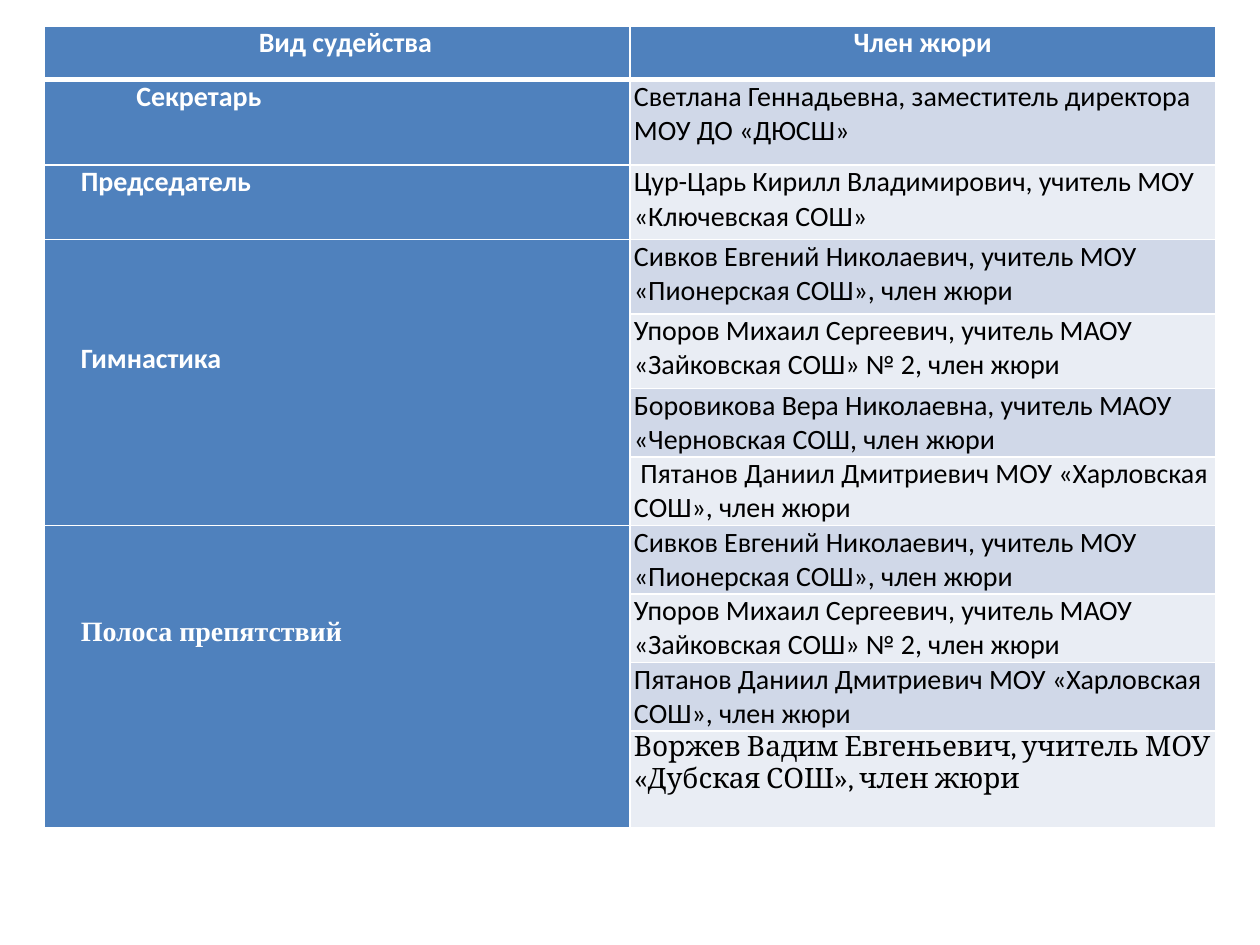
from lxml import etree
from pptx import Presentation
from pptx.dml.color import RGBColor
from pptx.enum.text import PP_ALIGN
from pptx.oxml.ns import qn
from pptx.util import Cm, Pt

CENTER, LEFT = PP_ALIGN.CENTER, PP_ALIGN.LEFT
WHITE = RGBColor(0xFF, 0xFF, 0xFF)
BLACK = RGBColor(0, 0, 0)
BLUE = RGBColor(0x4F, 0x81, 0xBD)
BANDS = (RGBColor(0xD0, 0xD8, 0xE8), RGBColor(0xE9, 0xED, 0xF4))

SANS, SERIF, ROMAN = "Calibri", "Cambria", "Times New Roman"
HEIGHTS = [1.08, 1.73, 1.5, 1.5, 1.5] + [1.37] * 5 + [1.96]

# Role, rows spanned, left indent, top inset, font
ROLES = [
    ("Секретарь", 1, 1.85, 0, SANS),
    ("Председатель", 1, 0.73, 0, SANS),
    ("Гимнастика", 4, 0.73, 2.06, SANS),
    ("Полоса препятствий", 4, 0.73, 1.84, ROMAN),
]
JURY = [
    "Светлана Геннадьевна, заместитель директора МОУ ДО «ДЮСШ»",
    "Цур-Царь Кирилл Владимирович, учитель МОУ «Ключевская СОШ»",
    "Сивков Евгений Николаевич, учитель МОУ «Пионерская СОШ», член жюри",
    "Упоров Михаил Сергеевич, учитель МАОУ «Зайковская СОШ» № 2, член жюри",
    "Боровикова Вера Николаевна, учитель МАОУ «Черновская СОШ, член жюри",
    " Пятанов Даниил Дмитриевич МОУ «Харловская СОШ», член жюри",
    "Сивков Евгений Николаевич, учитель МОУ «Пионерская СОШ», член жюри",
    "Упоров Михаил Сергеевич, учитель МАОУ «Зайковская СОШ» № 2, член жюри",
    "Пятанов Даниил Дмитриевич МОУ «Харловская СОШ», член жюри",
    "Воржев Вадим Евгеньевич, учитель МОУ «Дубская СОШ», член жюри",
]


def add_grid(slide):
    """Add the plain two-column table."""
    grid = slide.shapes.add_table(
        len(HEIGHTS), 2, Cm(0.9), Cm(0.52), Cm(23.6), Cm(sum(HEIGHTS))).table
    grid.first_row = grid.horz_banding = False
    for row, height in zip(grid.rows, HEIGHTS):
        row.height = Cm(height)
    return grid


def set_edges(cell, top, bottom):
    """Draw white cell borders, in points."""
    props = cell._tc.get_or_add_tcPr()
    edges = (("L", 1), ("R", 1), ("T", top), ("B", bottom))
    for place, (side, width) in enumerate(edges):
        line = etree.Element(qn("a:ln" + side), w=str(Pt(width)))
        fill = etree.SubElement(line, qn("a:solidFill"))
        etree.SubElement(fill, qn("a:srgbClr"), val=str(WHITE))
        props.insert(place, line)


def fill_cell(cell, text, back, color, bold=False, font=SANS,
              align=LEFT, left=0.08, top=0, right=0.08):
    """Write one styled paragraph into a cell."""
    cell.fill.solid()
    cell.fill.fore_color.rgb = back
    cell.margin_left, cell.margin_right = Cm(left), Cm(right)
    cell.margin_top, cell.margin_bottom = Cm(top), 0
    cell.text = text
    para = cell.text_frame.paragraphs[0]
    para.alignment = align
    para.font.name, para.font.size = font, Pt(16)
    para.font.bold = bold
    para.font.color.rgb = color


def main():
    deck = Presentation()
    deck.slide_width, deck.slide_height = Cm(25.4), Cm(19.05)
    slide = deck.slides.add_slide(deck.slide_layouts[6])
    grid = add_grid(slide)

    # Header
    fill_cell(grid.cell(0, 0), "Вид судейства", BLUE, WHITE, True,
              align=CENTER, left=0.33, right=0)
    fill_cell(grid.cell(0, 1), "Член жюри", BLUE, WHITE, True, align=CENTER)

    # Roles
    row = 1
    for role, span, left, top, font in ROLES:
        cell = grid.cell(row, 0)
        if span > 1:
            cell.merge(grid.cell(row + span - 1, 0))
        fill_cell(cell, role, BLUE, WHITE, True, font,
                  left=left, top=top, right=0)
        row += span

    # Jury members
    for row, name in enumerate(JURY, 1):
        font = SERIF if row == len(JURY) else SANS
        fill_cell(grid.cell(row, 1), name, BANDS[(row - 1) % 2], BLACK,
                  font=font)

    # Borders, with a thick rule under the header
    for row in range(len(HEIGHTS)):
        for col in range(2):
            set_edges(grid.cell(row, col), 3 if row == 1 else 1,
                      3 if row == 0 else 1)

    deck.save("out.pptx")


if __name__ == "__main__":
    main()
